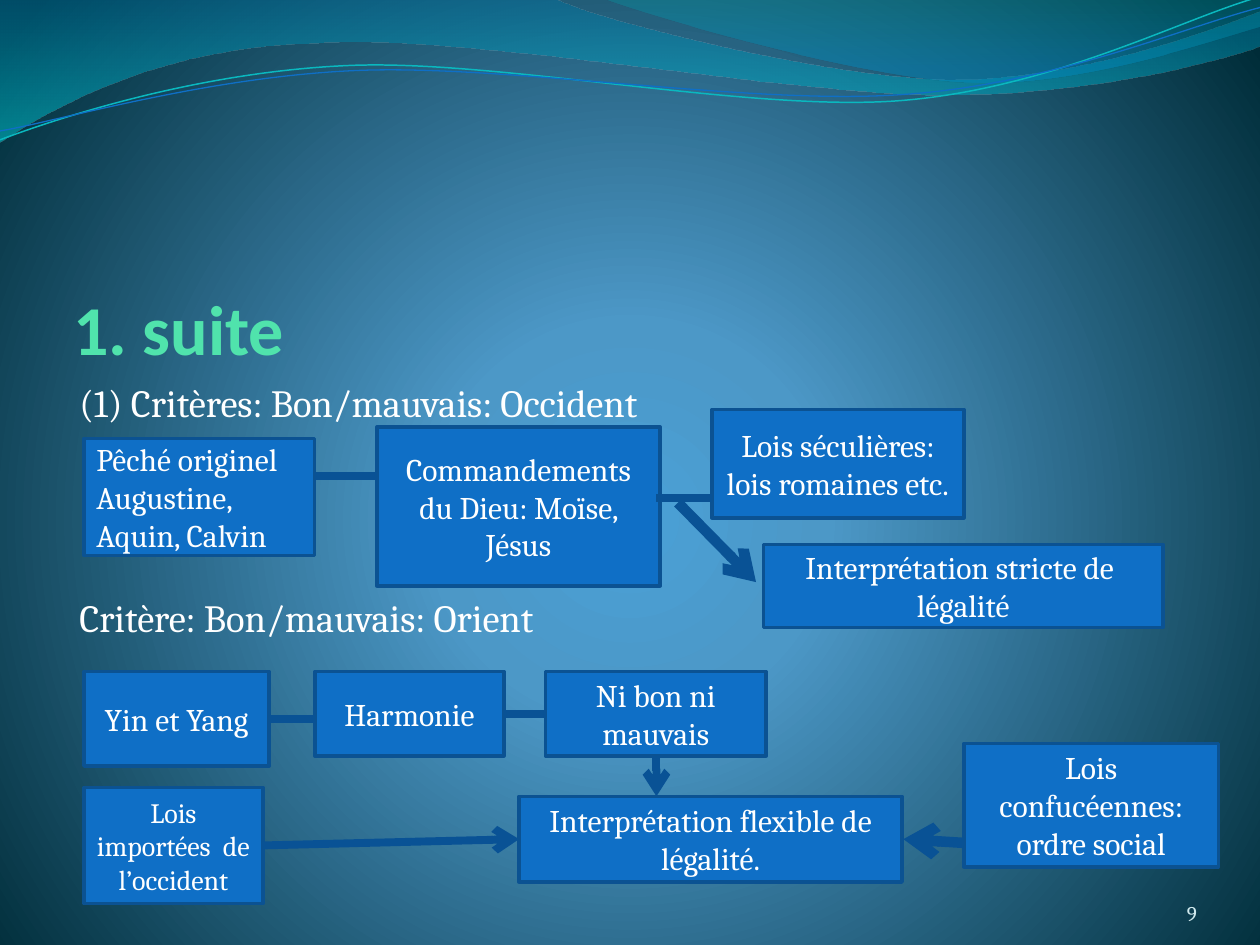
from dataclasses import dataclass
from math import cos, radians, sin
from typing import NamedTuple

from lxml.etree import SubElement
from pptx import Presentation
from pptx.dml.color import RGBColor
from pptx.enum.shapes import MSO_CONNECTOR, MSO_SHAPE
from pptx.enum.text import MSO_ANCHOR, MSO_AUTO_SIZE, PP_ALIGN
from pptx.oxml.ns import qn
from pptx.util import Inches, Pt

SLIDE_WIDTH, SLIDE_HEIGHT = Inches(10), Inches(7.5)
COLUMN, ROW = SLIDE_WIDTH / 10, SLIDE_HEIGHT / 7.5
LEFT_EDGE = 2 / 3
TITLE_ONLY = 5

WHITE = RGBColor(0xFF, 0xFF, 0xFF)
MINT = RGBColor(0x50, 0xE3, 0xAC)
PALE = RGBColor(0xD1, 0xEA, 0xEE)
BLUE = RGBColor(0x0F, 0x6F, 0xC6)
EDGE = RGBColor(0x0B, 0x52, 0x92)
LINK = RGBColor(0x09, 0x52, 0x95)
TEAL = RGBColor(0x0A, 0xB8, 0xBF)
GLOW = RGBColor(0x4A, 0xA0, 0xD6)
SKY = RGBColor(0x4C, 0x98, 0xC7)
NIGHT = RGBColor(0x00, 0x2C, 0x38)
WAVE_BLUE = RGBColor(0x00, 0x74, 0xA1)
WAVE_CYAN = RGBColor(0x00, 0xC6, 0xCF)
CREST_GREEN = RGBColor(0x00, 0xA1, 0xA9)
CREST_BLUE = RGBColor(0x00, 0x8B, 0xBF)


class Area(NamedTuple):
    column: float
    row: float
    columns: float
    rows: float

    def lengths(self) -> tuple:
        return (round(self.column * COLUMN), round(self.row * ROW),
                round(self.columns * COLUMN), round(self.rows * ROW))


class Stop(NamedTuple):
    percent: int
    color: RGBColor
    opacity: int = 100


@dataclass
class Wave:
    outline: list
    stops: tuple = ()
    color: RGBColor | None = None
    weight: float = 0
    tilt: float = 0
    pivot: tuple = (0, 0)


@dataclass
class Idea:
    text: str
    area: Area
    size: int = 18
    align: PP_ALIGN = PP_ALIGN.CENTER


@dataclass
class Link:
    start: tuple
    end: tuple
    weight: float = 4.5
    arrow: bool = False


WAVES = [
    Wave([(0, 0), (4.4, -0.01), (4.76, 0.17, 6.64, 0.63, 7.58, 0.63),
          (8.53, 0.63, 9.58, 0.26, 10, 0.09), (10.01, 0.36),
          (9.83, 0.44, 8.7, 0.76, 7.46, 0.75), (6.22, 0.75, 3.82, 0.28, 2.57, 0.34),
          (1.29, 0.36, 0.46, 0.83, -0.01, 1.13), (0, 0)],
         stops=(Stop(0, WAVE_BLUE, 45), Stop(100, WAVE_CYAN, 55))),
    Wave([(4.79, -0.01), (5.09, 0.11, 6.82, 0.62, 7.69, 0.65),
          (8.56, 0.69, 9.61, 0.32, 10, 0.21), (10, 0), (4.79, -0.01)],
         stops=(Stop(0, CREST_GREEN, 30), Stop(80, CREST_BLUE, 45))),
    Wave([(0, 1.11), (0.48, 0.93, 1.58, 0.57, 2.77, 0.52),
          (3.95, 0.47, 5.93, 0.89, 7.13, 0.8), (8.33, 0.71, 9.38, 0.15, 9.98, -0.02)],
         color=TEAL, weight=0.85, tilt=-2.7, pivot=(4.99, 0.57)),
    Wave([(0, 1.04), (0.47, 0.96, 1.64, 0.61, 2.83, 0.56),
          (4.03, 0.51, 5.97, 0.84, 7.17, 0.75), (8.36, 0.67, 9.41, 0.21, 10, 0.06)],
         color=BLUE, weight=0.75, tilt=-2.7, pivot=(5, 0.59)),
]

IDEAS = [
    Idea("Pêché originel\nAugustine, Aquin, Calvin", Area(LEFT_EDGE, 3.48, 1.83, 0.93),
         align=PP_ALIGN.LEFT),
    Idea("Commandements du Dieu: Moïse, Jésus", Area(2.99, 3.39, 2.25, 1.26)),
    Idea("Lois séculières: lois romaines etc.", Area(5.65, 3.25, 2, 0.86)),
    Idea("Yin et Yang", Area(LEFT_EDGE, 5.33, 1.47, 0.75)),
    Idea("Harmonie", Area(2.5, 5.33, 1.5, 0.67)),
    Idea("Ni bon ni mauvais", Area(4.33, 5.33, 1.75, 0.67)),
    Idea("Lois importées  de l’occident", Area(LEFT_EDGE, 6.25, 1.42, 0.92), size=16),
    Idea("Interprétation flexible de légalité.", Area(4.12, 6.32, 3.04, 0.68)),
    Idea("Interprétation stricte de  légalité", Area(6.06, 4.32, 3.17, 0.66)),
    Idea("Lois confucéennes: ordre social", Area(7.65, 5.9, 2.02, 0.98)),
]

LINKS = [
    Link((2.5, 3.78), (2.99, 3.78)),
    Link((2.14, 5.71), (2.5, 5.71)),
    Link((4, 5.67), (4.33, 5.67)),
    Link((2.08, 6.71), (4.12, 6.66), arrow=True),
    Link((5.21, 6), (5.21, 6.32), arrow=True),
    Link((5.38, 3.99), (6, 4.62), weight=6, arrow=True),
    Link((7.65, 6.69), (7.17, 6.66), weight=6, arrow=True),
    Link((5.21, 3.95), (5.65, 3.95)),
]


def set_gradient(owner, stops: tuple, radial: bool = False) -> None:
    gradient = owner.find(".//" + qn("a:gradFill"))
    gradient.clear()
    stop_list = SubElement(gradient, qn("a:gsLst"))
    for stop in stops:
        entry = SubElement(stop_list, qn("a:gs"), pos=str(stop.percent * 1000))
        color = SubElement(entry, qn("a:srgbClr"), val=str(stop.color))
        if stop.opacity < 100:
            SubElement(color, qn("a:alpha"), val=str(stop.opacity * 1000))
    if radial:
        focus = SubElement(gradient, qn("a:path"), path="circle")
        SubElement(focus, qn("a:fillToRect"), l="10000", t="110000", r="10000", b="100000")
    else:
        SubElement(gradient, qn("a:lin"), ang="5400000", scaled="0")


def level_points(wave: Wave, segment: tuple) -> list:
    turn = radians(-wave.tilt)
    px, py = wave.pivot
    return [((px + (x - px) * cos(turn) - (y - py) * sin(turn)) * COLUMN,
             (py + (x - px) * sin(turn) + (y - py) * cos(turn)) * ROW)
            for x, y in zip(segment[::2], segment[1::2])]


def draw_wave(slide, wave: Wave) -> None:
    start, *segments = [level_points(wave, segment) for segment in wave.outline]
    builder = slide.shapes.build_freeform(*start[0])
    builder.add_line_segments([segment[-1] for segment in segments], close=bool(wave.stops))
    ribbon = builder.convert_to_shape()
    for step, segment in zip(list(ribbon._element.iter(qn("a:lnTo"))), segments):
        if len(segment) == 3:
            step.tag = qn("a:cubicBezTo")
            for x, y in segment[:2]:
                SubElement(step, qn("a:pt"), x=str(round(x - ribbon.left)),
                           y=str(round(y - ribbon.top)))
            step.append(step[0])
    ribbon.rotation = wave.tilt % 360
    ribbon.shadow.inherit = False
    if wave.stops:
        ribbon.fill.gradient()
        set_gradient(ribbon._element, wave.stops)
        ribbon.line.fill.background()
    else:
        ribbon.fill.background()
        ribbon.line.color.rgb = wave.color
        ribbon.line.width = Pt(wave.weight)


def write(frame, text: str, size: int, color: RGBColor = WHITE, font: str = "Cambria",
          align: PP_ALIGN = PP_ALIGN.LEFT, anchor: MSO_ANCHOR = MSO_ANCHOR.TOP,
          inset: float | None = None) -> None:
    frame.text = text
    frame.word_wrap = True
    frame.auto_size = MSO_AUTO_SIZE.NONE
    frame.vertical_anchor = anchor
    if inset is not None:
        frame.margin_left = frame.margin_right = Inches(inset)
        frame.margin_top = frame.margin_bottom = Inches(inset)
    for paragraph in frame.paragraphs:
        paragraph.alignment = align
        paragraph.font.name = font
        paragraph.font.size = Pt(size)
        paragraph.font.color.rgb = color


def draw_idea(slide, idea: Idea) -> None:
    box = slide.shapes.add_shape(MSO_SHAPE.RECTANGLE, *idea.area.lengths())
    box.shadow.inherit = False
    box.fill.solid()
    box.fill.fore_color.rgb = BLUE
    box.line.color.rgb = EDGE
    box.line.width = Pt(2)
    write(box.text_frame, idea.text, idea.size, align=idea.align, anchor=MSO_ANCHOR.MIDDLE)


def draw_link(slide, link: Link) -> None:
    ends = [round(value * unit) for point in (link.start, link.end)
            for value, unit in zip(point, (COLUMN, ROW))]
    connector = slide.shapes.add_connector(MSO_CONNECTOR.STRAIGHT, *ends)
    connector.line.color.rgb = LINK
    connector.line.width = Pt(link.weight)
    if link.arrow:
        SubElement(connector.line._get_or_add_ln(), qn("a:tailEnd"), type="arrow")
    SubElement(connector._element.spPr, qn("a:effectLst"))


def main() -> None:
    deck = Presentation()
    deck.slide_width, deck.slide_height = SLIDE_WIDTH, SLIDE_HEIGHT
    slide = deck.slides.add_slide(deck.slide_layouts[TITLE_ONLY])
    slide.background.fill.gradient()
    set_gradient(slide._element, (Stop(0, GLOW), Stop(25, SKY), Stop(100, NIGHT)), radial=True)
    for wave in WAVES:
        draw_wave(slide, wave)

    title = slide.shapes.title
    title.left, title.top, title.width, title.height = Area(0.58, 1.44, 8.5, 1.49).lengths()
    write(title.text_frame, "1. suite", 40, MINT, "Calibri", anchor=MSO_ANCHOR.BOTTOM, inset=0)
    title.text_frame.paragraphs[0].font.bold = True

    criteria = slide.shapes.add_textbox(*Area(0.58, 2.96, 8.5, 4.29).lengths()).text_frame
    write(criteria, "(1) Critères: Bon/mauvais: Occident\nCritère: Bon/mauvais: Orient", 22,
          inset=0.05)
    for paragraph, gap in zip(criteria.paragraphs, (4.8, 96.6)):
        paragraph.space_before = Pt(gap)

    for idea in IDEAS:
        draw_idea(slide, idea)
    for link in LINKS:
        draw_link(slide, link)
    page_number = slide.shapes.add_textbox(*Area(8.67, 6.95, 0.83, 0.4).lengths())
    write(page_number.text_frame, "9", 12, PALE, align=PP_ALIGN.RIGHT,
          anchor=MSO_ANCHOR.BOTTOM, inset=0)
    deck.save("out.pptx")


if __name__ == "__main__":
    main()
